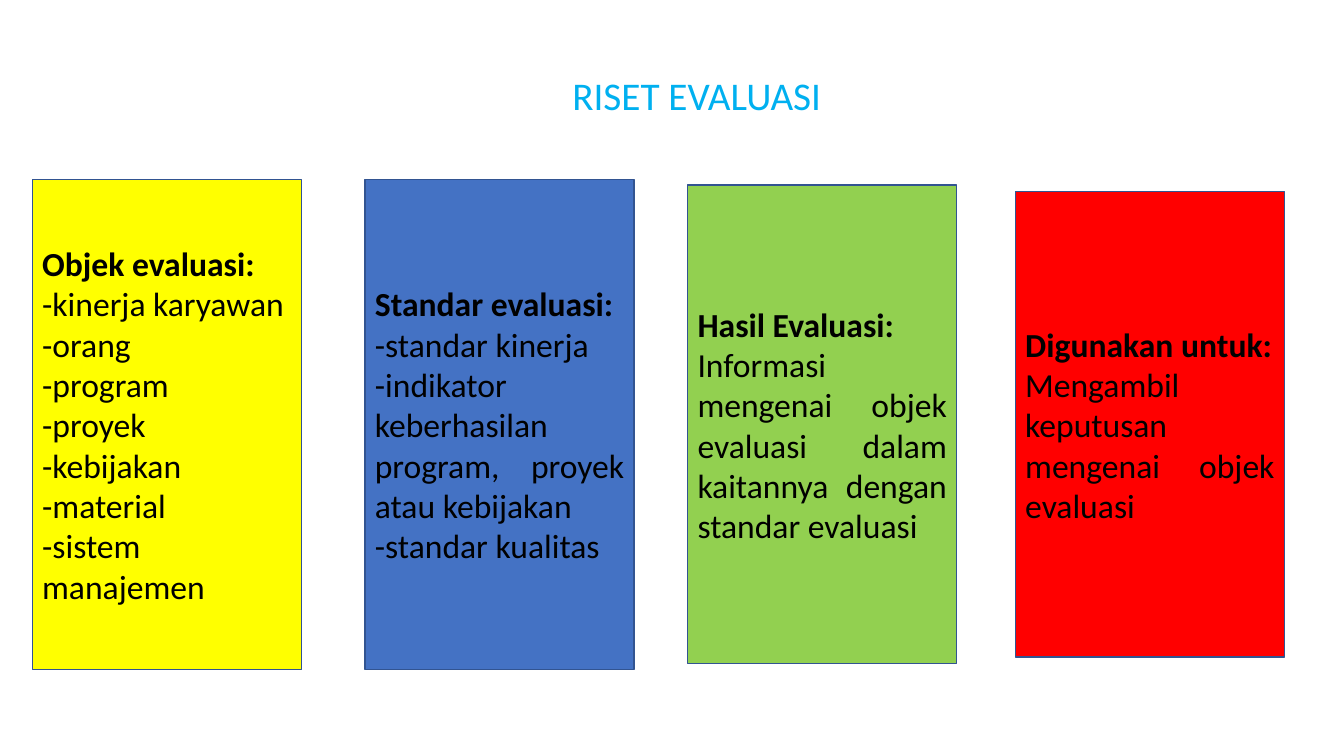
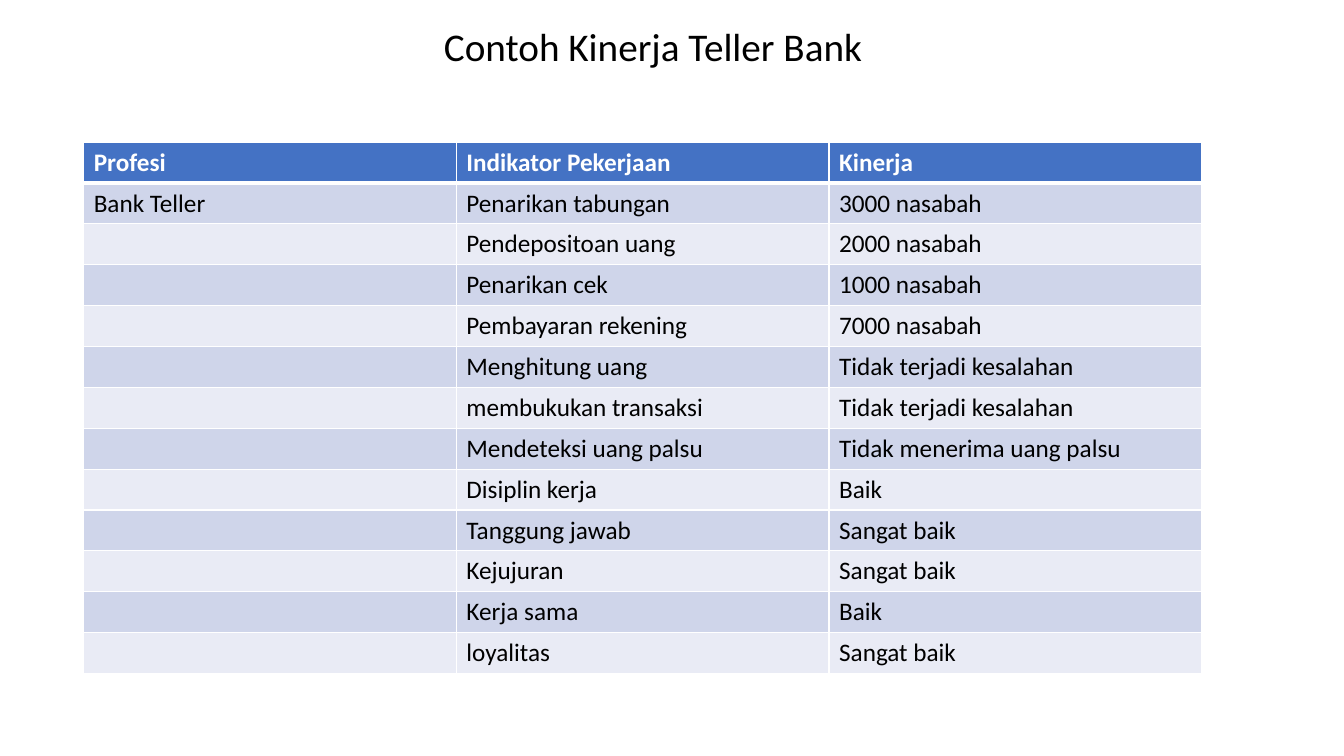
from lxml import etree
from pptx import Presentation
from pptx.dml.color import RGBColor
from pptx.enum.shapes import MSO_SHAPE
from pptx.enum.text import MSO_ANCHOR, MSO_AUTO_SIZE, PP_ALIGN
from pptx.oxml.ns import qn
from pptx.util import Inches, Pt

RECT = MSO_SHAPE.RECTANGLE
MIDDLE, BOTTOM = MSO_ANCHOR.MIDDLE, MSO_ANCHOR.BOTTOM
CENTER, JUSTIFY, LEFT = PP_ALIGN.CENTER, PP_ALIGN.JUSTIFY, PP_ALIGN.LEFT
NO_FIT = MSO_AUTO_SIZE.NONE

FONT = "Calibri"
BLACK, WHITE, BLUE, SKY = "000000", "FFFFFF", "4472C4", "00B0F0"
OUTLINE = "325491"
BANDS = ("CFD5EA", "E9EBF5")
TITLE_SIZE, BOX_SIZE, TABLE_SIZE = 28, 24, 18

BOX_WIDTH, BOX_MIDDLE = 2.67, 4.21
BOXES = [
    (0.32, 4.86, "FFFF00", ["Objek evaluasi:", "-kinerja karyawan", "-orang", "-program",
                            "-proyek", "-kebijakan", "-material", "-sistem manajemen"]),
    (3.62, 4.86, BLUE, ["Standar evaluasi:", "-standar kinerja",
                        "-indikator keberhasilan program, proyek atau kebijakan",
                        "-standar kualitas"]),
    (6.82, 4.75, "92D050", ["Hasil Evaluasi:",
                            "Informasi mengenai objek evaluasi dalam kaitannya dengan "
                            "standar evaluasi"]),
    (10.07, 4.62, "FF0000", ["Digunakan untuk:",
                             "Mengambil keputusan mengenai objek evaluasi"]),
]

TABLE_AT = (0.83, 1.41, 11.09, 5.27)
ROWS = [
    ("Profesi", "Indikator Pekerjaan", "Kinerja"),
    ("Bank Teller", "Penarikan tabungan", "3000 nasabah"),
    ("", "Pendepositoan uang", "2000 nasabah"),
    ("", "Penarikan cek", "1000 nasabah"),
    ("", "Pembayaran rekening", "7000 nasabah"),
    ("", "Menghitung uang", "Tidak terjadi kesalahan"),
    ("", "membukukan transaksi", "Tidak terjadi kesalahan"),
    ("", "Mendeteksi uang palsu", "Tidak menerima uang palsu"),
    ("", "Disiplin kerja", "Baik"),
    ("", "Tanggung jawab", "Sangat baik"),
    ("", "Kejujuran", "Sangat baik"),
    ("", "Kerja sama", "Baik"),
    ("", "loyalitas", "Sangat baik"),
]


def color(hex_value):
    return RGBColor.from_string(hex_value)


def paint(fill, hex_value):
    fill.solid()
    fill.fore_color.rgb = color(hex_value)


def write(p, text, size, hex_value, align, bold=False):
    p.alignment = align
    font = p.font
    if text:
        r = p.add_run()
        r.text = text
        font = r.font
    for name, value in {"name": FONT, "size": Pt(size), "bold": bold}.items():
        setattr(font, name, value)
    font.color.rgb = color(hex_value)


def add_slide(prs, title, at, hex_value):
    s = prs.slides.add_slide(prs.slide_layouts[5])
    sp = s.shapes.title
    for name, value in zip(("left", "top", "width", "height"), at):
        setattr(sp, name, Inches(value))
    tf = sp.text_frame
    for name, value in {"vertical_anchor": BOTTOM, "auto_size": NO_FIT,
                        "word_wrap": True}.items():
        setattr(tf, name, value)
    p = tf.paragraphs[0]
    p.line_spacing = 0.9
    write(p, title, TITLE_SIZE, hex_value, CENTER)
    return s


def add_box(s, left, height, fill, lines):
    top = BOX_MIDDLE - height / 2
    sp = s.shapes.add_shape(RECT, *map(Inches, (left, top, BOX_WIDTH, height)))
    sp.shadow.inherit = False
    paint(sp.fill, fill)
    sp.line.color.rgb = color(OUTLINE)
    sp.line.width = Pt(1)
    tf = sp.text_frame
    tf.word_wrap = True
    tf.vertical_anchor = MIDDLE
    for i, line in enumerate(lines):
        p = tf.add_paragraph() if i else tf.paragraphs[0]
        write(p, line, BOX_SIZE, BLACK, JUSTIFY, bold=i == 0)


def set_borders(cell, row):
    widths = {"L": 1, "R": 1, "T": 3 if row == 1 else 1, "B": 3 if row == 0 else 1}
    tc_pr = cell._tc.get_or_add_tcPr()
    for side, width in widths.items():
        ln = etree.SubElement(tc_pr, qn(f"a:ln{side}"), w=str(Pt(width)))
        fill = etree.SubElement(ln, qn("a:solidFill"))
        etree.SubElement(fill, qn("a:srgbClr"), val=WHITE)


def add_rows(s):
    frame = s.shapes.add_table(len(ROWS), len(ROWS[0]), *map(Inches, TABLE_AT))
    for i, row in enumerate(ROWS):
        header = i == 0
        for j, text in enumerate(row):
            cell = frame.table.cell(i, j)
            set_borders(cell, i)
            paint(cell.fill, BLUE if header else BANDS[(i - 1) % 2])
            write(cell.text_frame.paragraphs[0], text, TABLE_SIZE,
                  WHITE if header else BLACK, LEFT, bold=header)


def main():
    prs = Presentation()
    prs.slide_width, prs.slide_height = Inches(13.33), Inches(7.5)
    s = add_slide(prs, "RISET EVALUASI", (1.26, 0.27, 11.3, 0.96), SKY)
    for box in BOXES:
        add_box(s, *box)
    s = add_slide(prs, "Contoh Kinerja Teller Bank ", (1.52, 0.07, 10, 0.67), BLACK)
    add_rows(s)
    prs.save("out.pptx")


if __name__ == "__main__":
    main()
